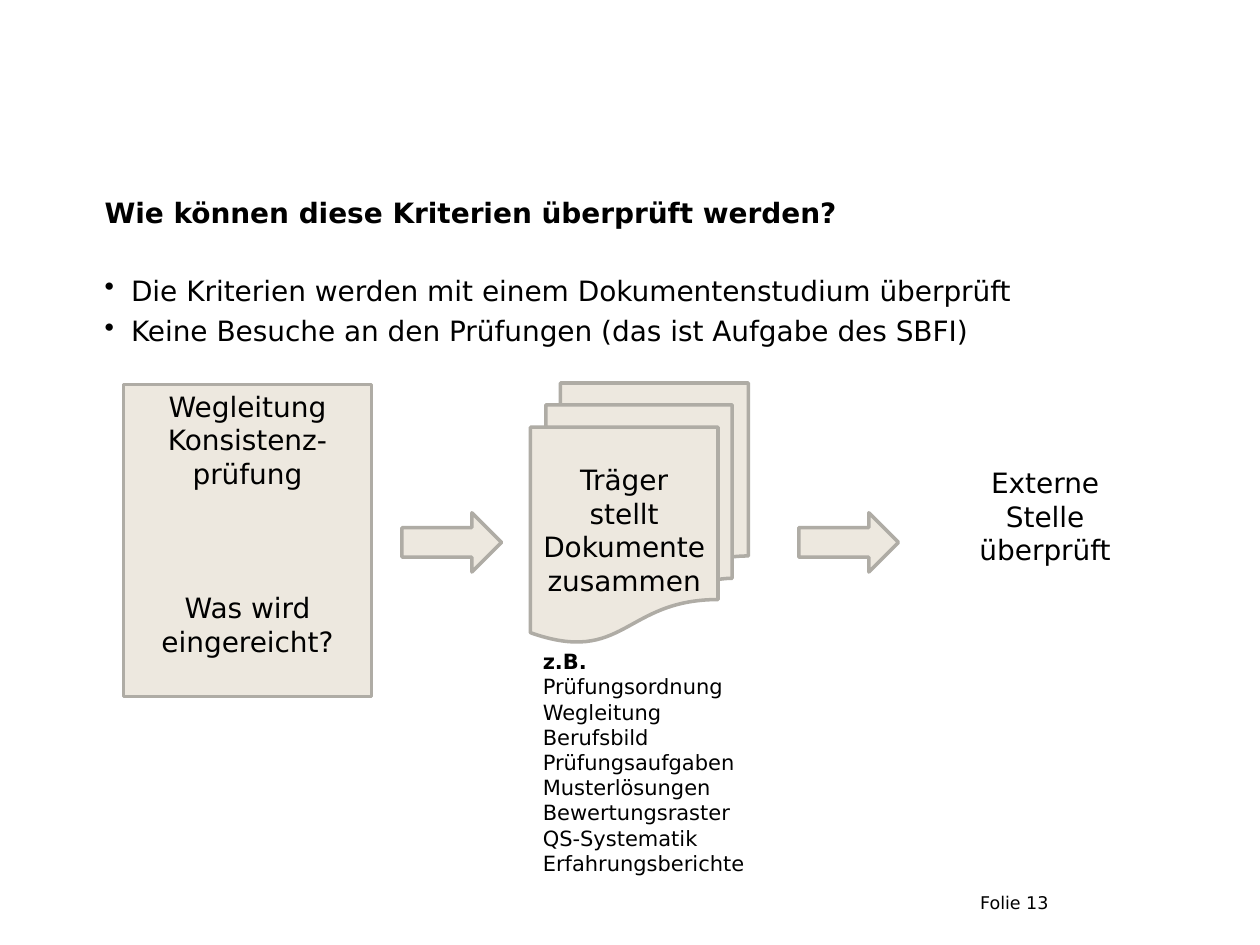
from dataclasses import dataclass

from lxml.etree import SubElement
from pptx import Presentation
from pptx.dml.color import RGBColor
from pptx.enum.shapes import MSO_SHAPE as Shape
from pptx.enum.text import MSO_ANCHOR as Anchor, PP_ALIGN as Align
from pptx.oxml.ns import qn
from pptx.util import Inches, Pt

COLUMNS, ROWS = 100, 75
WIDTH, HEIGHT = Inches(10), Inches(7.5)


@dataclass(frozen=True)
class Theme:
    font: str = "DejaVu Sans"
    ink: RGBColor = RGBColor(0, 0, 0)
    paper: RGBColor = RGBColor(255, 255, 255)
    sand: RGBColor = RGBColor(0xED, 0xE8, 0xDF)
    edge: RGBColor = RGBColor(0xAF, 0xAC, 0xA5)
    line: Pt = Pt(2)
    main: Pt = Pt(16)
    detail: Pt = Pt(12)
    footer: Pt = Pt(10)
    bullet_gap: Pt = Pt(4)
    block_gap: Pt = Pt(57.5)


THEME = Theme()


def across(columns):
    return round(WIDTH * columns / COLUMNS)


def down(rows):
    return round(HEIGHT * rows / ROWS)


def place(left, top, width, height):
    return across(left), down(top), across(width), down(height)


def add_paragraphs(frame, lines, size=THEME.main, align=Align.LEFT, bold_first=False, gap=0, bullets=False):
    """Write one paragraph per line, with the gap between paragraphs only."""
    for index, line in enumerate(lines):
        para = frame.add_paragraph() if index else frame.paragraphs[0]
        if bullets:
            add_bullet(para)
        para.alignment = align
        para.space_before = Pt(0) if index == 0 else gap
        span = para.add_run()
        span.text = line
        span.font.name = THEME.font
        span.font.size = size
        span.font.bold = bold_first and index == 0
        span.font.color.rgb = THEME.ink


def add_bullet(para):
    properties = para._p.get_or_add_pPr()
    indent = across(2.1)
    properties.set("marL", str(indent))
    properties.set("indent", str(-indent))
    SubElement(properties, qn("a:buChar")).set("char", "•")


def add_text(page, area, lines, inset=0, **style):
    box = page.shapes.add_textbox(*place(*area))
    frame = box.text_frame
    frame.word_wrap = True
    frame.vertical_anchor = Anchor.TOP
    frame.margin_left = frame.margin_right = across(inset)
    frame.margin_top = frame.margin_bottom = down(inset / 2)
    add_paragraphs(frame, lines, **style)


def add_step(page, kind, area, lines=(), fill=THEME.sand, edge=THEME.edge):
    step = page.shapes.add_shape(kind, *place(*area))
    step.shadow.inherit = False
    step.fill.solid()
    step.fill.fore_color.rgb = fill
    step.line.color.rgb = edge
    step.line.width = THEME.line
    frame = step.text_frame
    frame.word_wrap = True
    frame.vertical_anchor = Anchor.MIDDLE
    add_paragraphs(frame, lines, align=Align.CENTER)
    return step


def add_flow(page):
    guide = add_step(page, Shape.RECTANGLE, (9.8, 30.5, 19.7, 24.8),
                     ["Wegleitung", "Konsistenz-prüfung", "Was wird eingereicht?"])
    guide.text_frame.paragraphs[-1].space_before = THEME.block_gap
    guide.text_frame.margin_bottom = down(3.2)

    add_step(page, Shape.FLOWCHART_MULTIDOCUMENT, (42.1, 30.4, 17.3, 20.6),
             ["Träger stellt Dokumente zusammen"])
    add_step(page, Shape.RECTANGLE, (75.1, 30.5, 15.7, 20.9),
             ["Externe Stelle überprüft"], THEME.paper, THEME.paper)
    for left in (31.9, 63.4):
        add_step(page, Shape.RIGHT_ARROW, (left, 40.7, 7.9, 4.7))


def main():
    deck = Presentation()
    deck.slide_width, deck.slide_height = WIDTH, HEIGHT
    page = deck.slides.add_slide(deck.slide_layouts[6])

    add_text(page, (8.3, 15.5, 84.2, 5.8),
             ["Wie können diese Kriterien überprüft werden?"], bold_first=True)
    add_text(page, (8.3, 21.7, 84.2, 7),
             ["Die Kriterien werden mit einem Dokumentenstudium überprüft",
              "Keine Besuche an den Prüfungen (das ist Aufgabe des SBFI)"],
             gap=THEME.bullet_gap, bullets=True)
    add_flow(page)
    add_text(page, (42.1, 51, 19.7, 19),
             ["z.B.", "Prüfungsordnung", "Wegleitung", "Berufsbild", "Prüfungsaufgaben",
              "Musterlösungen", "Bewertungsraster", "QS-Systematik", "Erfahrungsberichte"],
             inset=1, size=THEME.detail, bold_first=True)
    add_text(page, (77.8, 70.8, 18, 4.2), ["Folie 13"], size=THEME.footer)

    deck.save("out.pptx")


if __name__ == "__main__":
    main()
